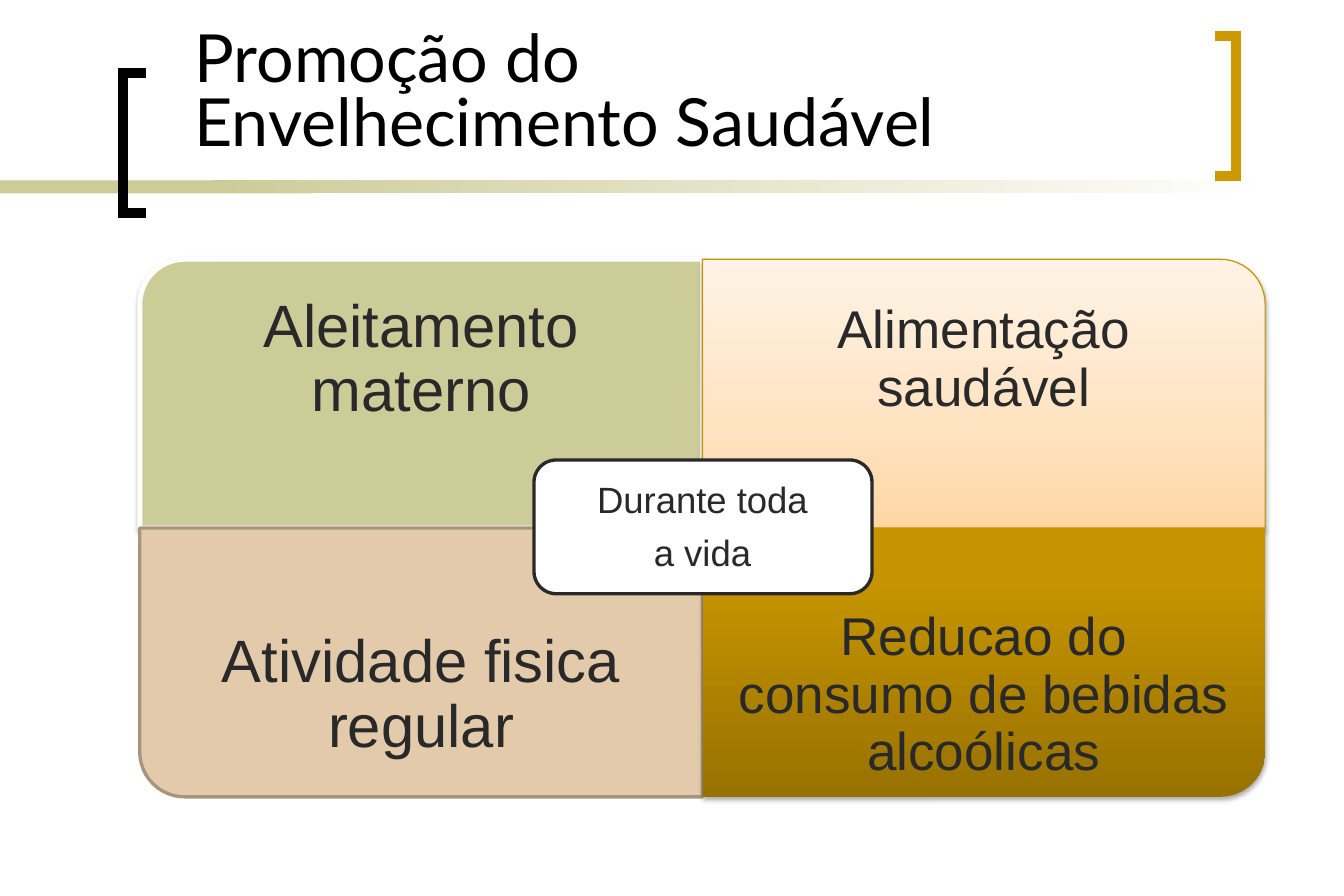
"""Build the slide about promoting healthy ageing."""
from dataclasses import dataclass
from typing import Optional

from lxml.etree import SubElement
from pptx import Presentation
from pptx.dml.color import RGBColor
from pptx.enum.shapes import MSO_SHAPE
from pptx.enum.text import MSO_ANCHOR, PP_ALIGN
from pptx.oxml import parse_xml
from pptx.oxml.ns import nsdecls, qn
from pptx.util import Pt

PX = 9144
BLACK = RGBColor(0x00, 0x00, 0x00)
WHITE = RGBColor(0xFF, 0xFF, 0xFF)
INK = RGBColor(0x29, 0x29, 0x29)
SAGE = RGBColor(0xCC, 0xCC, 0x99)
GOLD = RGBColor(0xCC, 0x99, 0x00)
DARK_GOLD = RGBColor(0xC8, 0x96, 0x00)
SAND = RGBColor(0xE2, 0xCA, 0xAA)
BROWN = RGBColor(0xA7, 0x95, 0x7E)
PEACH_STOPS = ((0, RGBColor(0xFF, 0xD6, 0xA5)), (35, RGBColor(0xFF, 0xE2, 0xBF)),
               (100, RGBColor(0xFF, 0xF3, 0xE7)))
GOLD_STOPS = ((0, RGBColor(0x98, 0x72, 0x00)), (80, RGBColor(0xC6, 0x94, 0x00)),
              (100, RGBColor(0xC7, 0x95, 0x00)))
GRID_LEFT, GRID_TOP, CELL_WIDTH, CELL_HEIGHT = 117, 217, 471, 225
LABEL_HEIGHT = 169


@dataclass(frozen=True)
class Quadrant:
    """One quarter of the matrix."""
    text: str
    column: int
    row: int
    rotation: int
    size: int
    inset: int
    fill: Optional[RGBColor] = None
    stops: tuple = ()
    line: Optional[RGBColor] = None
    line_width: float = 0
    shadow_alpha: int = 0


@dataclass(frozen=True)
class Bracket:
    """A square bracket whose arms reach from spine to tip."""
    spine: int
    tip: int
    top: int
    color: RGBColor


QUADRANTS = (
    Quadrant("Aleitamento materno", 0, 0, 270, 36, 28, fill=SAGE,
             line=WHITE, line_width=3, shadow_alpha=38),
    Quadrant("Alimentação saudável", 1, 0, 0, 32, 25, stops=PEACH_STOPS,
             line=DARK_GOLD, line_width=0.75, shadow_alpha=38),
    Quadrant("Atividade fisica regular", 0, 1, 180, 36, 28, fill=SAND,
             line=BROWN, line_width=2),
    Quadrant("Reducao do consumo de bebidas alcoólicas", 1, 1, 90, 32, 25,
             stops=GOLD_STOPS, shadow_alpha=35),
)
BRACKETS = (Bracket(103, 122, 61, BLACK), Bracket(1035, 1017, 30, GOLD))


def add_gradient(shape, stops: tuple, angle: int) -> None:
    """Fill a shape with a linear gradient fixed to the slide."""
    marks = "".join(f'<a:gs pos="{position * 1000}"><a:srgbClr val="{color}"/></a:gs>'
                    for position, color in stops)
    gradient = parse_xml(f'<a:gradFill {nsdecls("a")} rotWithShape="0"><a:gsLst>{marks}</a:gsLst>'
                         f'<a:lin ang="{angle * 60000}" scaled="0"/></a:gradFill>')
    shape.fill.background()
    properties = shape.element.spPr
    properties.replace(properties.find(qn("a:noFill")), gradient)


def add_shadow(shape, alpha: int) -> None:
    """Give a shape a soft shadow below it."""
    effects = shape.element.spPr.find(qn("a:effectLst"))
    effects.append(parse_xml(
        f'<a:outerShdw {nsdecls("a")} blurRad="40000" dist="20000" dir="5400000" rotWithShape="0">'
        f'<a:srgbClr val="000000"><a:alpha val="{alpha * 1000}"/></a:srgbClr></a:outerShdw>'))


def set_line(shape, color: Optional[RGBColor], width: float) -> None:
    """Outline a shape, or leave it without an outline."""
    if color is None:
        shape.line.fill.background()
    else:
        shape.line.color.rgb = color
        shape.line.width = Pt(width)


def add_box(slide, kind, left: int, top: int, width: int, height: int, *,
            fill: Optional[RGBColor] = None, stops: tuple = (), angle: int = 270,
            line: Optional[RGBColor] = None, line_width: float = 0, rotation: int = 0):
    """Add a preset shape that covers the given area once rotated."""
    if rotation % 180:
        left, top = left + (width - height) / 2, top + (height - width) / 2
        width, height = height, width
    shape = slide.shapes.add_shape(kind, *(round(value * PX) for value in (left, top, width, height)))
    shape.rotation = rotation
    shape.shadow.inherit = False
    if stops:
        add_gradient(shape, stops, angle)
    else:
        shape.fill.solid()
        shape.fill.fore_color.rgb = fill
    set_line(shape, line, line_width)
    return shape


def add_text(slide, text: str, left: int, top: int, width: int, height: int, *,
             size: int, inset: int, font: str = "Arial", color: RGBColor = INK,
             align: PP_ALIGN = PP_ALIGN.CENTER, anchor: MSO_ANCHOR = MSO_ANCHOR.MIDDLE,
             spacing: float = 0.9, after: float = 0, bottom: Optional[int] = None) -> None:
    """Add a wrapped text box with one paragraph for each line of text."""
    box = slide.shapes.add_textbox(left * PX, top * PX, width * PX, height * PX)
    frame = box.text_frame
    frame.word_wrap = True
    frame.vertical_anchor = anchor
    frame.margin_left = frame.margin_right = frame.margin_top = inset * PX
    frame.margin_bottom = (inset if bottom is None else bottom) * PX
    frame.text = text
    for paragraph in frame.paragraphs:
        paragraph.alignment = align
        paragraph.line_spacing = spacing
        paragraph.space_after = Pt(after)
        for run in paragraph.runs:
            run.font.name = font
            run.font.size = Pt(size)
            run.font.color.rgb = color


def add_bracket(slide, bracket: Bracket) -> None:
    """Draw one square bracket as an open outline."""
    bottom = bracket.top + 117
    builder = slide.shapes.build_freeform(bracket.tip, bracket.top, scale=PX)
    builder.add_line_segments([(bracket.spine, bracket.top), (bracket.spine, bottom),
                               (bracket.tip, bottom)], close=False)
    shape = builder.convert_to_shape()
    shape.shadow.inherit = False
    shape.fill.background()
    set_line(shape, bracket.color, 6)
    SubElement(shape.element.spPr.find(qn("a:ln")), qn("a:miter"), lim="800000")


def add_quadrant(slide, quadrant: Quadrant) -> None:
    """Draw one quarter of the matrix and its label."""
    left = GRID_LEFT + quadrant.column * CELL_WIDTH
    top = GRID_TOP + quadrant.row * CELL_HEIGHT
    shape = add_box(slide, MSO_SHAPE.ROUND_1_RECTANGLE, left, top, CELL_WIDTH, CELL_HEIGHT,
                    fill=quadrant.fill, stops=quadrant.stops, line=quadrant.line,
                    line_width=quadrant.line_width, rotation=quadrant.rotation)
    if quadrant.shadow_alpha:
        add_shadow(shape, quadrant.shadow_alpha)
    label_top = top + quadrant.row * (CELL_HEIGHT - LABEL_HEIGHT)
    add_text(slide, quadrant.text, left, label_top, CELL_WIDTH, LABEL_HEIGHT,
             size=quadrant.size, inset=quadrant.inset)


def main() -> None:
    """Build and save the presentation."""
    presentation = Presentation()
    presentation.slide_width, presentation.slide_height = 1125 * PX, 750 * PX
    slide = presentation.slides.add_slide(presentation.slide_layouts[6])
    add_box(slide, MSO_SHAPE.RECTANGLE, 0, 151, 262, 11, fill=SAGE)
    add_box(slide, MSO_SHAPE.RECTANGLE, 178, 151, 891, 11,
            stops=((0, SAGE), (100, WHITE)), angle=0)
    for bracket in BRACKETS:
        add_bracket(slide, bracket)
    add_text(slide, "Promoção do\vEnvelhecimento Saudável", 153, 44, 881, 155,
             size=40, inset=10, bottom=66, font="Lato", color=BLACK,
             align=PP_ALIGN.LEFT, anchor=MSO_ANCHOR.BOTTOM, spacing=0.8)
    for quadrant in QUADRANTS:
        add_quadrant(slide, quadrant)
    add_box(slide, MSO_SHAPE.ROUNDED_RECTANGLE, 447, 385, 283, 112,
            fill=WHITE, line=INK, line_width=2)
    add_text(slide, "Durante toda\na vida", 452, 391, 272, 102, size=22, inset=9, after=8)
    presentation.save("out.pptx")


if __name__ == "__main__":
    main()
